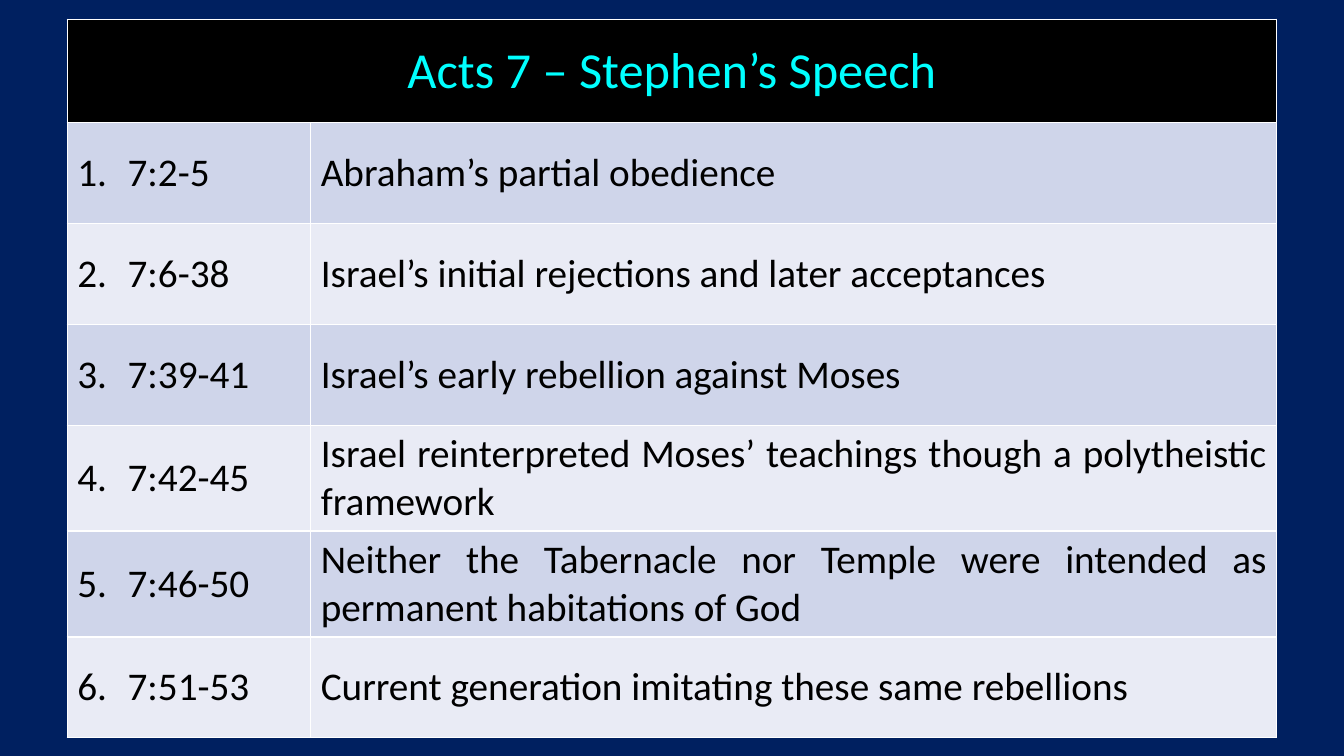
from lxml.etree import SubElement
from pptx import Presentation
from pptx.dml.color import RGBColor
from pptx.enum.text import MSO_ANCHOR, PP_ALIGN
from pptx.oxml.ns import qn
from pptx.util import Pt

TITLE = "Acts 7 – Stephen’s Speech"
SECTIONS = [
    ("7:2-5", "Abraham’s partial obedience"),
    ("7:6-38", "Israel’s initial rejections and later acceptances"),
    ("7:39-41", "Israel’s early rebellion against Moses"),
    ("7:42-45", "Israel reinterpreted Moses’ teachings though a polytheistic framework"),
    ("7:46-50", "Neither the Tabernacle nor Temple were intended as permanent habitations of God"),
    ("7:51-53", "Current generation imitating these same rebellions"),
]
COLORS = {
    "background": "002060",
    "header": "000000",
    "title": "00FFFF",
    "text": "000000",
    "odd": "CFD5EA",
    "even": "E9EBF5",
    "border": "FFFFFF",
}
COLUMN_WIDTHS = [174, 690]
ROW_HEIGHTS = [74, 72, 72, 72, 74, 74, 72]
LEFT, TOP = 48, 13.7


def draw_borders(cell):
    properties = cell._tc.get_or_add_tcPr()
    for side in ("lnL", "lnR", "lnT", "lnB"):
        line = SubElement(properties, qn(f"a:{side}"), w=str(Pt(1)))
        fill = SubElement(line, qn("a:solidFill"))
        SubElement(fill, qn("a:srgbClr"), val=COLORS["border"])


def write(cell, text, *, fill, color="text", size=28, align=PP_ALIGN.JUSTIFY, hanging=0, after=0):
    cell.fill.solid()
    cell.fill.fore_color.rgb = RGBColor.from_string(COLORS[fill])
    cell.vertical_anchor = MSO_ANCHOR.MIDDLE
    paragraph = cell.text_frame.paragraphs[0]
    paragraph.alignment = align
    paragraph.space_after = Pt(after)
    if hanging:
        indent = paragraph._p.get_or_add_pPr()
        indent.set("marL", str(Pt(hanging)))
        indent.set("indent", str(-Pt(hanging)))
    run = paragraph.add_run()
    run.text = text
    run.font.name = "Calibri"
    run.font.size = Pt(size)
    run.font.bold = False
    run.font.color.rgb = RGBColor.from_string(COLORS[color])


def main():
    presentation = Presentation()
    presentation.slide_width, presentation.slide_height = Pt(960), Pt(540)
    slide = presentation.slides.add_slide(presentation.slide_layouts[6])
    slide.background.fill.solid()
    slide.background.fill.fore_color.rgb = RGBColor.from_string(COLORS["background"])

    outline = slide.shapes.add_table(
        len(ROW_HEIGHTS), len(COLUMN_WIDTHS),
        Pt(LEFT), Pt(TOP), Pt(sum(COLUMN_WIDTHS)), Pt(sum(ROW_HEIGHTS)),
    ).table
    for column, width in zip(outline.columns, COLUMN_WIDTHS):
        column.width = Pt(width)
    for row, height in zip(outline.rows, ROW_HEIGHTS):
        row.height = Pt(height)
    for cell in outline.iter_cells():
        draw_borders(cell)

    heading = outline.cell(0, 0)
    heading.merge(outline.cell(0, 1))
    write(heading, TITLE, fill="header", color="title", size=36, align=PP_ALIGN.CENTER)
    for number, (verses, theme) in enumerate(SECTIONS, start=1):
        band = "odd" if number % 2 else "even"
        write(outline.cell(number, 0), f"{number}.\t{verses}", fill=band, hanging=36, after=12)
        write(outline.cell(number, 1), theme, fill=band)

    presentation.save("out.pptx")


if __name__ == "__main__":
    main()
